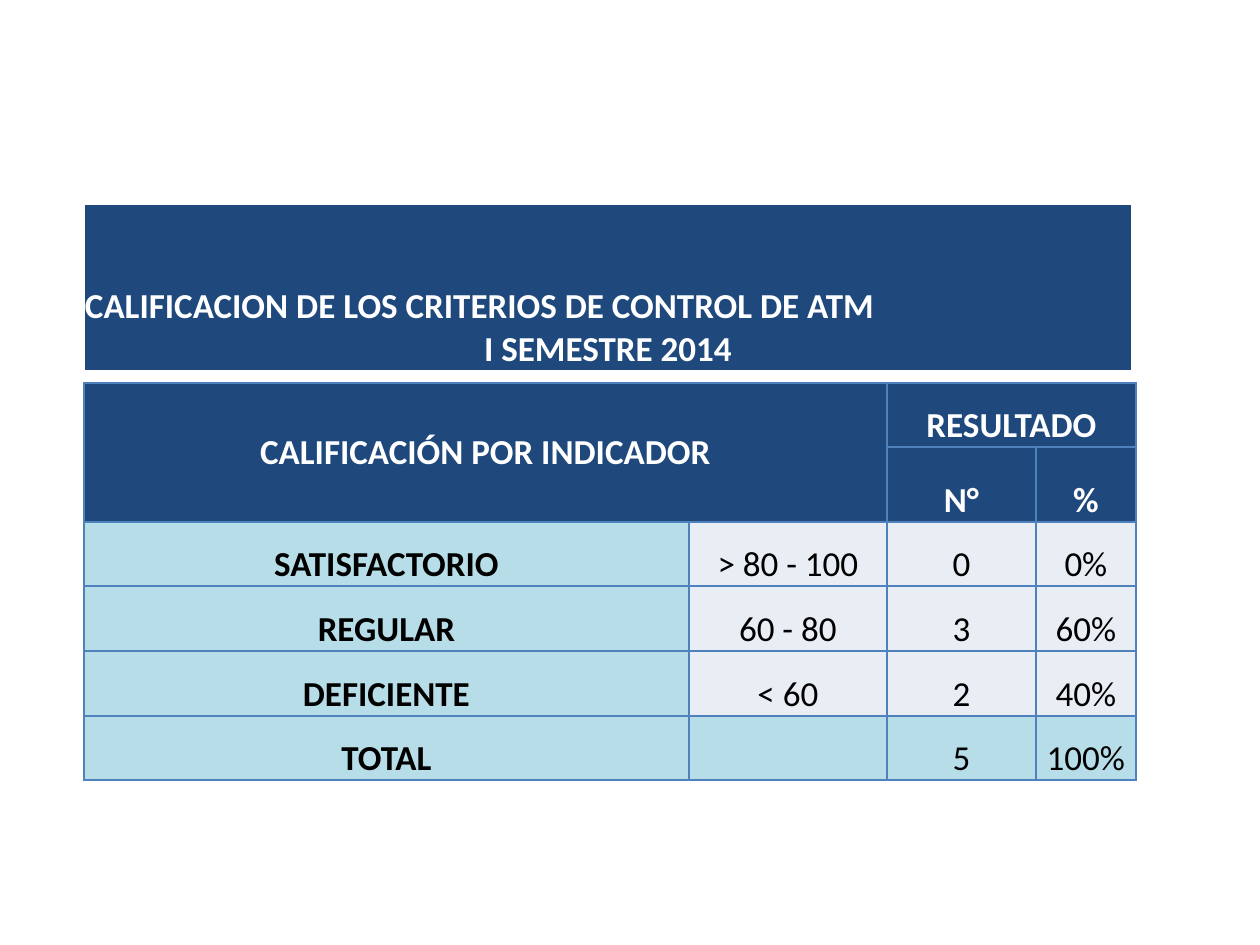
from lxml.etree import SubElement
from pptx import Presentation
from pptx.dml.color import RGBColor
from pptx.enum.text import MSO_ANCHOR, PP_ALIGN
from pptx.oxml.ns import qn
from pptx.util import Emu, Pt

PX = 914400 / 126
NAVY = RGBColor(0x1F, 0x49, 0x7D)
BLUE = RGBColor(0x4F, 0x81, 0xBD)
AQUA = RGBColor(0xB7, 0xDE, 0xE8)
PALE = RGBColor(0xE9, 0xED, 0xF4)
WHITE = RGBColor(0xFF, 0xFF, 0xFF)
BLACK = RGBColor(0, 0, 0)

COLUMNS = [605, 198, 149, 100]
ROWS = [64, 75, 64, 65, 65, 64]
HEADER = [
    ["CALIFICACIÓN POR INDICADOR", "", "RESULTADO", ""],
    ["", "", "N°", "%"],
]
RESULTS = [
    ["SATISFACTORIO", "> 80 - 100", "0", "0%"],
    ["REGULAR", "60 - 80", "3", "60%"],
    ["DEFICIENTE", "< 60", "2", "40%"],
    ["TOTAL", "", "5", "100%"],
]


def px(length):
    return Emu(round(length * PX))


def set_attributes(target, values):
    for name, value in values.items():
        setattr(target, name, value)


def set_borders(cell, color):
    properties = cell._tc.get_or_add_tcPr()
    for position, side in enumerate(("lnL", "lnR", "lnT", "lnB")):
        line = SubElement(properties, qn(f"a:{side}"), w=str(Pt(1)))
        fill = SubElement(line, qn("a:solidFill"))
        SubElement(fill, qn("a:srgbClr"), val=str(color))
        properties.insert(position, line)


def add_plain_table(slide, left, top, columns, rows):
    """Add a table with the given column widths and row heights, without banding."""
    table = slide.shapes.add_table(
        len(rows), len(columns), px(left), px(top), px(sum(columns)), px(sum(rows))
    ).table
    set_attributes(table, {"first_row": False, "horz_banding": False})
    for column, width in zip(table.columns, columns):
        column.width = px(width)
    for row, height in zip(table.rows, rows):
        row.height = px(height)
    return table


def format_cell(cell, text, fill, border, color, bold):
    set_attributes(cell, {
        "text": text,
        "vertical_anchor": MSO_ANCHOR.BOTTOM,
        "margin_left": px(1),
        "margin_right": px(1),
        "margin_top": px(1),
        "margin_bottom": 0,
    })
    cell.fill.solid()
    cell.fill.fore_color.rgb = fill
    set_borders(cell, border)
    for para in cell.text_frame.paragraphs:
        para.alignment = PP_ALIGN.CENTER
        set_attributes(para.font, {"name": "Calibri", "size": Pt(20), "bold": bold})
        para.font.color.rgb = color


def add_title(slide, left, top, width, height):
    cell = add_plain_table(slide, left, top, [width], [height]).cell(0, 0)
    title = "CALIFICACION DE LOS CRITERIOS DE CONTROL DE ATM\nI SEMESTRE 2014"
    format_cell(cell, title, NAVY, WHITE, WHITE, True)
    cell.text_frame.paragraphs[0].alignment = PP_ALIGN.LEFT


def add_results(slide, left, top):
    table = add_plain_table(slide, left, top, COLUMNS, ROWS)
    for row, texts in enumerate(HEADER + RESULTS):
        for column, text in enumerate(texts):
            in_header = row < len(HEADER)
            is_label = column == 0
            is_total = row == len(ROWS) - 1
            fill = NAVY if in_header else AQUA if is_label or is_total else PALE
            color = WHITE if in_header else BLACK
            format_cell(table.cell(row, column), text, fill, BLUE, color,
                        in_header or is_label)
    table.cell(0, 0).merge(table.cell(1, 1))
    table.cell(0, 2).merge(table.cell(0, 3))
    table.cell(0, 0).vertical_anchor = MSO_ANCHOR.MIDDLE


def main():
    deck = Presentation()
    set_attributes(deck, {"slide_width": px(1260), "slide_height": px(945)})
    slide = deck.slides.add_slide(deck.slide_layouts[6])
    add_title(slide, 84, 204, 1048, 167)
    add_results(slide, 84, 383)
    deck.save("out.pptx")


if __name__ == "__main__":
    main()
